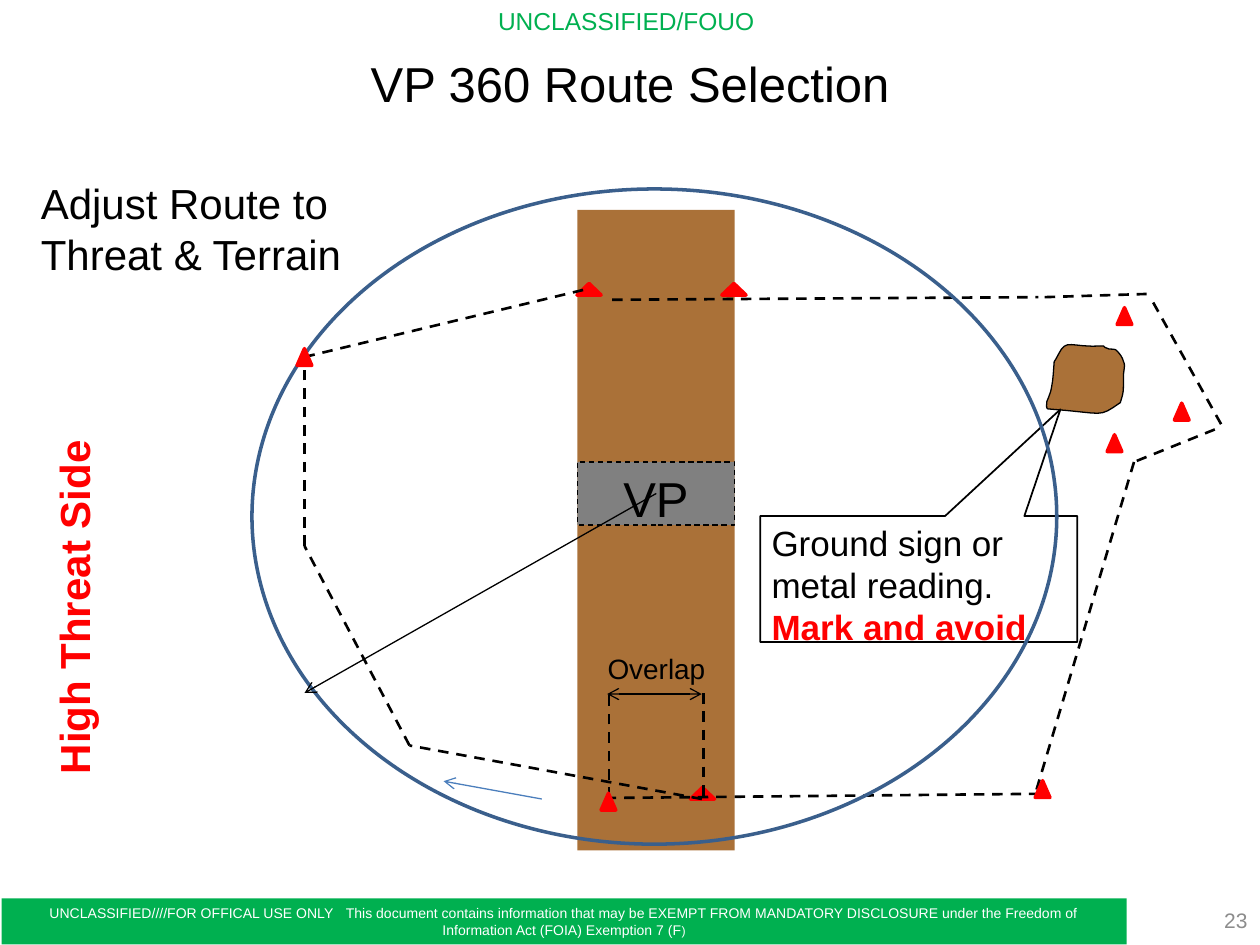
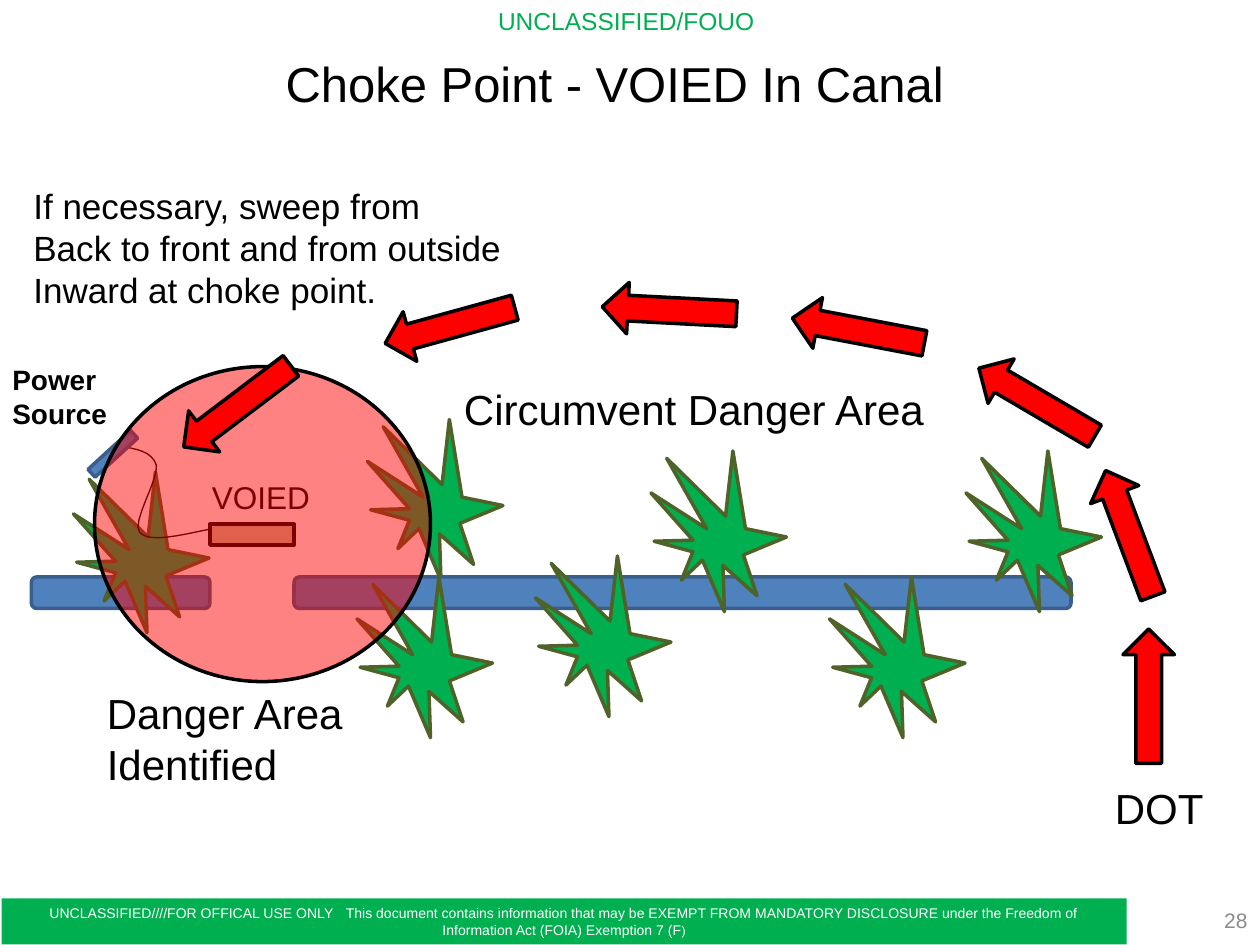
from dataclasses import dataclass
from itertools import pairwise

from lxml.etree import SubElement
from pptx import Presentation
from pptx.dml.color import RGBColor
from pptx.enum.dml import MSO_LINE
from pptx.enum.shapes import MSO_CONNECTOR, MSO_SHAPE
from pptx.enum.text import MSO_ANCHOR, PP_ALIGN
from pptx.oxml.ns import qn
from pptx.util import Inches, Pt

COLS, ROWS = 120, 90
SLIDE_W, SLIDE_H = Inches(10), Inches(7.5)


@dataclass(frozen=True)
class Theme:
    """Colours, font and type sizes of the deck."""
    font: str = "Arial"
    ink: str = "000000"
    white: str = "FFFFFF"
    green: str = "00B050"
    red: str = "FF0000"
    brown: str = "AA7138"
    gray: str = "808080"
    page: str = "8C8C8C"
    blue: str = "4F81BD"
    navy: str = "3A5F8C"
    arrow: str = "4B7EBC"
    olive: str = "4F6228"
    sand: str = "C4BD97"
    title: float = 28
    head: float = 24
    body: float = 20
    label: float = 18
    small: float = 16
    banner: float = 14
    number: float = 12
    notice: float = 8
    mark: float = 7


T = Theme()


@dataclass(frozen=True)
class Box:
    """A region of the slide, in grid columns and rows."""
    x: float
    y: float
    w: float
    h: float

    def at(self, x, y, w=0, h=0):
        """Return a box placed relative to this one."""
        return Box(self.x + x, self.y + y, w, h)

    def emu(self):
        """Return left, top, width and height in slide units."""
        cw, rh = SLIDE_W / COLS, SLIDE_H / ROWS
        return [round(n) for n in (self.x * cw, self.y * rh, self.w * cw, self.h * rh)]


PAGE = Box(0, 0, COLS, ROWS)
STAR = [(1.5, .7), (5.3, 7.4), (0, 4), (4, 8.5), (.3, 8.6), (4, 9.6), (2.9, 12.3), (4.9, 10.4),
        (7, 15.3), (6.85, 10.9), (10.1, 13.8), (8.8, 9.9), (12.9, 8.2), (9, 7.4), (7.8, 0), (7.1, 6.2)]


def style(font, color=T.ink, **fmt):
    """Apply format values to a font."""
    for name, value in {"name": T.font, **fmt}.items():
        setattr(font, name, value)
    font.color.rgb = RGBColor.from_string(color)


def write(sp, paras, size, align=PP_ALIGN.LEFT, anchor=MSO_ANCHOR.TOP, wrap=True, **fmt):
    """Fill a shape with paragraphs, each a string or a list of (text, format) runs."""
    tf = sp.text_frame
    for name, value in {"word_wrap": wrap, "vertical_anchor": anchor}.items():
        setattr(tf, name, value)
    for i, para in enumerate(paras):
        p = tf.add_paragraph() if i else tf.paragraphs[0]
        p.alignment = align
        for text, extra in [(para, {})] if isinstance(para, str) else para:
            r = p.add_run()
            r.text = text
            style(r.font, **{"size": Pt(size), **fmt, **extra})


def inset(sp, side, top):
    """Set the text insets of a shape, in inches."""
    tf = sp.text_frame
    for name, value in {"left": side, "right": side, "top": top, "bottom": top}.items():
        setattr(tf, f"margin_{name}", Inches(value))


def add_text(s, box, paras, size, **fmt):
    """Add a text box."""
    sp = s.shapes.add_textbox(*box.emu())
    write(sp, paras, size, **{"wrap": False, **fmt})
    return sp


def paint(sp, fill=None, line=None, width=2, dash=None):
    """Set the fill and outline of a shape."""
    sp.shadow.inherit = False
    if fill:
        sp.fill.solid()
        sp.fill.fore_color.rgb = RGBColor.from_string(fill)
    else:
        sp.fill.background()
    if line:
        sp.line.color.rgb = RGBColor.from_string(line)
        sp.line.width = Pt(width)
        sp.line.dash_style = dash
    else:
        sp.line.fill.background()
    return sp


def add_shape(s, kind, box, rotation=0, **look):
    """Add a painted preset shape."""
    sp = s.shapes.add_shape(kind, *box.emu())
    sp.rotation = rotation
    return paint(sp, **look)


def add_outline(s, box, points, close=True, **look):
    """Add a freeform whose points are relative to the box."""
    pts = [box.at(*pt).emu()[:2] for pt in points]
    fb = s.shapes.build_freeform(*pts[0])
    fb.add_line_segments(pts[1:], close=close)
    return paint(fb.convert_to_shape(), **look)


def curve(points, steps=8):
    """Sample a chain of cubic Bezier curves."""
    path = [points[0]]
    for i in range(0, len(points) - 1, 3):
        for t in (n / steps for n in range(1, steps + 1)):
            weights = (1 - t) ** 3, 3 * t * (1 - t) ** 2, 3 * t * t * (1 - t), t ** 3
            path.append(tuple(sum(w * pt[k] for w, pt in zip(weights, points[i:i + 4])) for k in (0, 1)))
    return path


def add_line(s, box, start, end, color=T.ink, width=.75, dash=None, ends=()):
    """Add a connector between two points of the box, with arrowheads at the named ends."""
    sp = s.shapes.add_connector(MSO_CONNECTOR.STRAIGHT, *box.at(*start).emu()[:2], *box.at(*end).emu()[:2])
    sp.line.color.rgb = RGBColor.from_string(color)
    sp.line.width = Pt(width)
    sp.line.dash_style = dash
    spPr = sp.element.spPr
    for end_tag in ends:
        SubElement(spPr.find(qn("a:ln")), qn(end_tag), type="arrow")
    SubElement(spPr, qn("a:effectLst"))


def build_bands(s, box):
    """Draw the marking and notice once and move them to the slide's layout."""
    marking = add_text(s, box.at(46.25, 0, 27.5, 4), ["UNCLASSIFIED/FOUO"], T.banner, color=T.green)
    notice = add_shape(s, MSO_SHAPE.RECTANGLE, box.at(.15, 85.55, 107.15, 4.4), fill=T.green)
    text = ("This document contains information that may be EXEMPT FROM MANDATORY DISCLOSURE under "
            "the Freedom of Information Act (FOIA) Exemption 7 (F")
    write(notice, [[("UNCLASSIFIED////FOR OFFICAL USE ONLY", {}), (" ", {}), (text, {}),
                    (")", {"size": Pt(T.mark)})]], T.notice, align=PP_ALIGN.CENTER, color=T.white)
    inset(notice, .2, .05)
    gap = notice.text_frame.paragraphs[0].runs[1]
    gap.font.element.set("spc", "445") if hasattr(gap.font, "element") else \
        notice.element.findall(".//" + qn("a:rPr"))[1].set("spc", "445")
    for sp in (marking, notice):
        s.slide_layout.shapes.element.append(sp.element)


def add_frame(s, title, title_box, number, align):
    """Place the title and the page number."""
    sp = s.shapes.title
    for name, value in zip(("left", "top", "width", "height"), title_box.emu()):
        setattr(sp, name, value)
    write(sp, [title], T.title, align=align, anchor=MSO_ANCHOR.MIDDLE)
    add_text(s, PAGE.at(109.2, 85.2, 10.8, 4.8), [number], T.number, align=PP_ALIGN.RIGHT,
             anchor=MSO_ANCHOR.MIDDLE, wrap=True, color=T.page)


def draw_road(s, box):
    """Draw the road and the vulnerable point across it."""
    add_shape(s, MSO_SHAPE.RECTANGLE, box, fill=T.brown)
    vp = add_shape(s, MSO_SHAPE.RECTANGLE, box.at(0, 24, box.w, 6), fill=T.gray, line=T.ink,
                   width=.75, dash=MSO_LINE.DASH)
    write(vp, ["VP"], T.title, align=PP_ALIGN.CENTER)


def draw_overlap(s, box):
    """Label the overlap of the route on the road."""
    add_text(s, box.at(1.7, 41.45, 11.9, 8), ["Overlap"], T.small)
    add_line(s, box, (2.85, 46.1), (11.85, 46.1), ends=("a:headEnd", "a:tailEnd"))


def draw_markers(s, box, places, w, h):
    """Draw red markers of one size."""
    for place in places:
        add_shape(s, MSO_SHAPE.ISOSCELES_TRIANGLE, box.at(*place, w, h), fill=T.red, line=T.red)


def draw_route(s, box):
    """Draw the search ring, the dashed route and its markers."""
    draw_markers(s, box, [(41.75, 57), (30.95, 9), (44.75, 9)], 2.3, 1.1)
    legs = [[(43, 48), (43, 58)],
            [(42.85, 58.1), (15, 53), (5, 34), (5, 16), (31.6, 9.6)],
            [(34.3, 10.55), (74.9, 10.3)],
            [(75.5, 10.3), (85.2, 10)],
            [(92.3, 22.4), (85.6, 10.4)],
            [(91.7, 22.9), (84, 26), (74.6, 57.6)],
            [(75, 57.6), (34, 58), (34, 48)]]
    for leg in legs:
        for start, end in pairwise(leg):
            add_line(s, box, start, end, width=1.5, dash=MSO_LINE.DASH)
    add_shape(s, MSO_SHAPE.OVAL, box, line=T.navy)
    add_line(s, box, (38.5, 29), (5, 48), ends=("a:tailEnd",))
    add_line(s, box, (27.6, 58.1), (18.25, 56.4), color=T.arrow, ends=("a:tailEnd",))
    draw_markers(s, box, [(87.85, 20.4), (81.45, 23.4), (4.3, 15.2), (74.6, 56.35),
                          (33.25, 57.55), (82.4, 11.3)], 1.4, 1.6)


def draw_sign(s, box):
    """Draw the disturbed ground and its callout."""
    patch = [(7.4, 2.3), (7.3, 1.9), (7.1, 1.6), (6.7, 1.2), (6.6, 1.1), (6.2, 1.1), (6, 1.1),
             (5.9, 1), (5.6, 1), (5.5, .8), (2.3, 1), (2, 0), (1.2, 1.6), (1.1, 1.8), (1, 2), (.8, 2.3),
             (.7, 3.6), (.7, 4), (.5, 5), (.4, 5.4), (.1, 6.1), (.1, 6.1), (.1, 6.4), (0, 6.7), (.2, 6.8),
             (5.8, 7.2), (4.9, 7.7), (7.1, 6.2), (7.4, 5.2), (7.4, 5.3), (7.4, 3.6),
             (7.4, 3.2), (7.6, 2.6), (7.4, 2.3)]
    add_outline(s, box.at(27.2, 0), curve(patch), fill=T.brown, line=T.ink, width=.75)
    note = add_shape(s, MSO_SHAPE.RECTANGULAR_CALLOUT, box.at(0, 17, 30.2, 12), line=T.ink, width=1)
    note.adjustments[0], note.adjustments[1] = .447, -1.347
    write(note, ["Ground sign or metal reading.", [("Mark and avoid", {"color": T.red, "bold": True})]], T.body)
    inset(note, .09, .04)


def draw_canal(s, box):
    """Draw the canal and the bushes along it."""
    first, *others = [(35, 0), (62, 3), (51, 13), (34, 15), (7, 5), (79, 15), (92, 3)]
    bush = {"fill": T.green, "line": T.olive}
    add_outline(s, box.at(*first), STAR, **bush)
    for x, w in ((28, 74), (3, 17)):
        add_shape(s, MSO_SHAPE.ROUNDED_RECTANGLE, box.at(x, 15, w, 3), fill=T.blue, line=T.navy)
    for place in others:
        add_outline(s, box.at(*place), STAR, **bush)


def draw_danger(s, box):
    """Draw the device, its power source and the danger area over them."""
    wire = [(10.9, 15.5), (8, 16.1), (5.2, 16.8), (4.3, 15.8), (3.5, 14.8), (6.1, 10.8), (5.9, 9.4),
            (5.5, 8.1), (4, 7.8), (2.4, 7.6)]
    add_shape(s, MSO_SHAPE.RECTANGLE, box.at(11, 15, 8, 2), fill=T.sand, line=T.ink)
    add_outline(s, box, curve(wire), close=False, line=T.ink, width=.75)
    add_shape(s, MSO_SHAPE.RECTANGLE, box.at(-1, 7.8, 5.5, 1), rotation=317.5, fill=T.blue, line=T.navy)
    add_text(s, box.at(10, 10, 11.9, 4.8), ["VOIED"], T.label)
    add_text(s, box.at(-9, -.95, 11.9, 7.7), ["Power", "Source"], T.small, bold=True)
    area = add_shape(s, MSO_SHAPE.OVAL, box, fill=T.red, line=T.ink)
    color = area.element.spPr.find(qn("a:solidFill")).find(qn("a:srgbClr"))
    SubElement(color, qn("a:alpha"), val="49000")
    add_text(s, box.at(0, box.h, 25, 11), ["Danger Area", "Identified"], T.head)


def draw_detour(s, box):
    """Draw the arrows around the danger area and their labels."""
    add_text(s, box.at(2, 0, 52, 13.3), ["If necessary, sweep from", "Back to front and from outside",
                                         "Inward at choke point."], T.body)
    add_text(s, box.at(43, 18.9, 46.7, 6), ["Circumvent Danger Area"], T.head)
    add_text(s, box.at(105, 56.9, 12, 6), ["DOT"], T.head)
    w, h = 4.9, 12.8
    for x, y, turn in ((109.4, 49.3, 0), (107.55, 33.8, 339.4), (98.75, 21.3, 300.4), (81.75, 14.5, 280.8),
                       (63.75, 12.55, 273), (42.85, 14, 254.6), (22.6, 21.7, 232.9)):
        add_shape(s, MSO_SHAPE.UP_ARROW, box.at(x - w / 2, y - h / 2, w, h), rotation=turn,
                  fill=T.red, line=T.ink)


def build_route_slide(s):
    """Build the route selection slide."""
    road = PAGE.at(54.98, 20, 15, 61)
    add_frame(s, "VP 360 Route Selection", PAGE.at(6, 3.6, 108, 8.6), "23", PP_ALIGN.CENTER)
    draw_road(s, road)
    draw_sign(s, PAGE.at(72.4, 32.15, 34.8, 29))
    draw_route(s, PAGE.at(24, 18, 76.65, 62.4))
    draw_overlap(s, road)
    add_text(s, PAGE.at(2.7, 16.35, 31.3, 10.9), ["Adjust Route to", "Threat & Terrain"], T.head)
    side = add_text(s, PAGE.at(-13.95, 54.9, 42, 5.9), ["High Threat Side"], T.head, wrap=True,
                    align=PP_ALIGN.CENTER, color=T.red, bold=True)
    inset(side, .09, .04)
    side.rotation = 270


def build_choke_slide(s):
    """Build the choke point slide."""
    add_frame(s, "Choke Point - VOIED In Canal", PAGE.at(26, 3.6, 73, 8.6), "28", PP_ALIGN.LEFT)
    draw_canal(s, PAGE.at(0, 39.95, COLS, 32))
    draw_danger(s, PAGE.at(9, 34.92, 32, 30))
    draw_detour(s, PAGE.at(0, 17, COLS, 63))


def main():
    """Build and save the deck."""
    prs = Presentation()
    prs.slide_width, prs.slide_height = SLIDE_W, SLIDE_H
    layout = prs.slide_layouts[5]
    for i, build in enumerate((build_route_slide, build_choke_slide)):
        s = prs.slides.add_slide(layout)
        if i == 0:
            build_bands(s, PAGE)
        build(s)
    prs.save("out.pptx")


if __name__ == "__main__":
    main()
